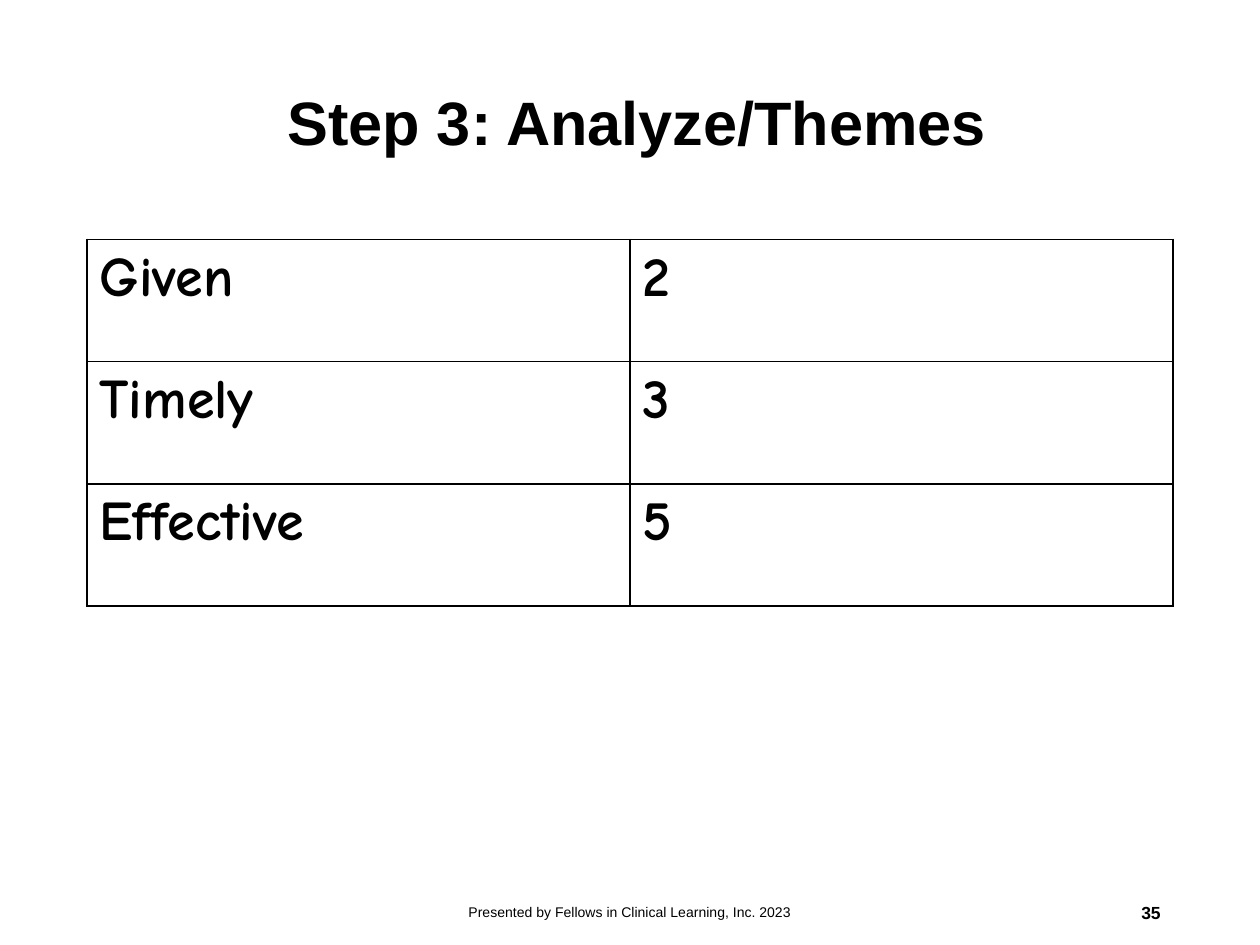
import pptx
import pptx.dml.color
import pptx.enum.text
import pptx.oxml
import pptx.oxml.ns
import pptx.util

WIDTH, HEIGHT = 10, 7.5
MARGIN = 0.69
BLACK = "000000"
WHITE = "FFFFFF"
ALIGN = pptx.enum.text.PP_ALIGN
MIDDLE = pptx.enum.text.MSO_ANCHOR.MIDDLE
THEMES = [("Given", "2"), ("Timely", "3"), ("Effective", "5")]


def color(hex_value):
    return pptx.dml.color.RGBColor.from_string(hex_value)


def inches(*lengths):
    return [pptx.util.Inches(length) for length in lengths]


def write(paragraph, text, size, font="Arial", bold=False, align=ALIGN.LEFT):
    paragraph.alignment = align
    run = paragraph.add_run()
    run.text = text
    run.font.name = font
    run.font.size = pptx.util.Pt(size)
    run.font.bold = bold
    run.font.color.rgb = color(BLACK)


def add_title(slide, text):
    title = slide.shapes.title
    title.left, title.top, title.width, title.height = inches(2.18, 0.27, 7.14, 1.45)
    title.text_frame.vertical_anchor = MIDDLE
    title.text_frame.word_wrap = True
    heading = title.text_frame.paragraphs[0]
    heading.line_spacing = 0.9
    write(heading, text, 35, bold=True)


def add_borders(cell):
    properties = cell._tc.get_or_add_tcPr()
    # Borders come before the fill in the cell properties
    for position, side in enumerate(("lnL", "lnR", "lnT", "lnB")):
        border = pptx.oxml.parse_xml(
            f'<a:{side} {pptx.oxml.ns.nsdecls("a")} w="{pptx.util.Pt(1)}">'
            f'<a:solidFill><a:srgbClr val="{BLACK}"/></a:solidFill></a:{side}>')
        properties.insert(position, border)


def add_theme_table(slide, rows):
    row_height = 0.97
    frame = slide.shapes.add_table(
        len(rows), len(rows[0]),
        *inches(MARGIN, 1.9, WIDTH - 2 * MARGIN, row_height * len(rows)))
    table = frame.table
    table.first_row = table.horz_banding = False
    for row, values in zip(table.rows, rows):
        row.height = pptx.util.Inches(row_height)
        for cell, value in zip(row.cells, values):
            cell.fill.solid()
            cell.fill.fore_color.rgb = color(WHITE)
            add_borders(cell)
            write(cell.text_frame.paragraphs[0], value, 32, "Comic Neue", bold=True)


def add_footer(slide, left, width, text, size, align, bold=False):
    footer = slide.shapes.add_textbox(*inches(left, 7.04, width, 0.4))
    footer.text_frame.word_wrap = True
    footer.text_frame.vertical_anchor = MIDDLE
    write(footer.text_frame.paragraphs[0], text, size, bold=bold, align=align)


def main():
    deck = pptx.Presentation()
    deck.slide_width, deck.slide_height = inches(WIDTH, HEIGHT)
    slide = deck.slides.add_slide(deck.slide_layouts[5])
    slide.background.fill.solid()
    slide.background.fill.fore_color.rgb = color(WHITE)

    # Title and theme counts
    add_title(slide, "Step 3: Analyze/Themes")
    add_theme_table(slide, THEMES)

    # Presenter line, centred, and page number at the right margin
    presenter_width, number_width = 3.38, 2.25
    add_footer(slide, (WIDTH - presenter_width) / 2, presenter_width,
               "Presented by Fellows in Clinical Learning, Inc. 2023", 8, ALIGN.CENTER)
    add_footer(slide, WIDTH - MARGIN - number_width, number_width,
               "35", 10, ALIGN.RIGHT, bold=True)

    deck.save("out.pptx")


if __name__ == "__main__":
    main()
